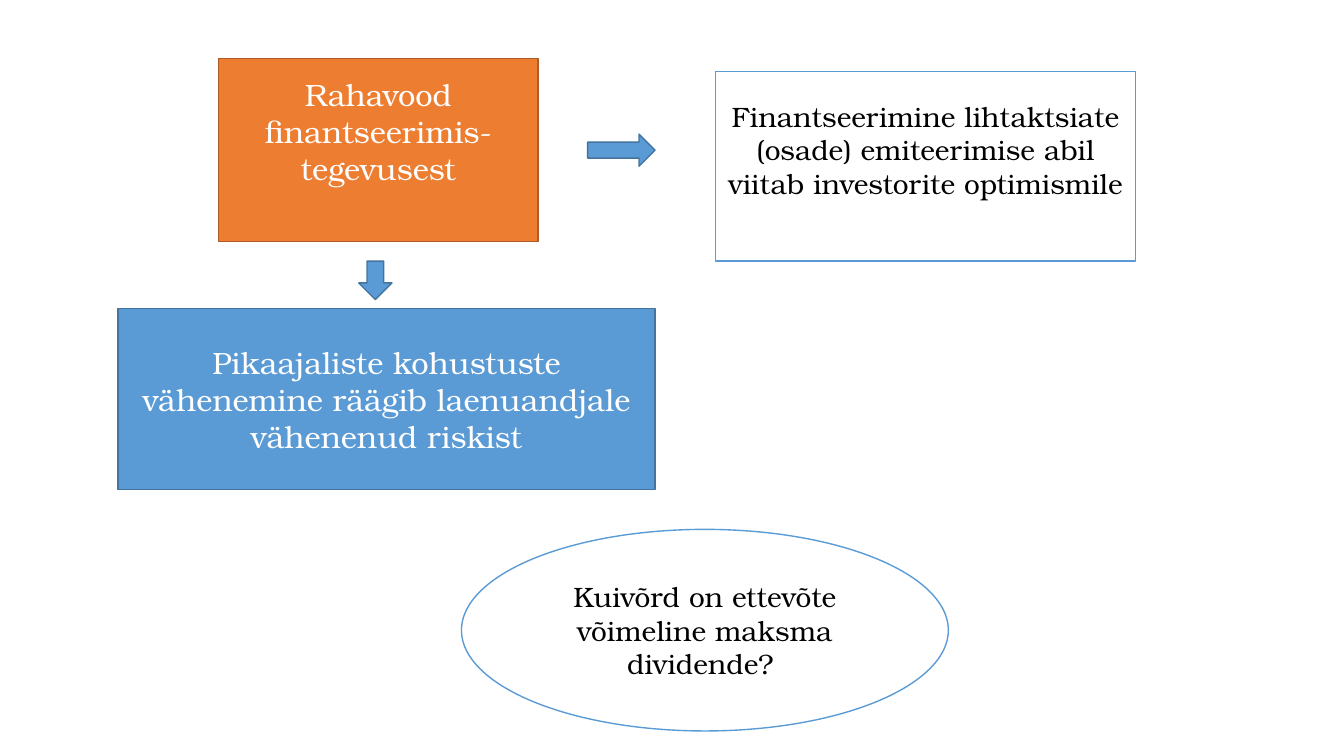
from dataclasses import dataclass

from pptx import Presentation
from pptx import util as u
from pptx.dml import color
from pptx.enum import shapes, text
from pptx.slide import Slide

FONT = "TeX Gyre Bonum"
COLORS = {
    "orange": "ED7D31",
    "orange_edge": "AF5C24",
    "blue": "5B9BD5",
    "blue_edge": "43739E",
    "white": "FFFFFF",
    "black": "000000",
}
KIND = shapes.MSO_SHAPE


@dataclass(frozen=True)
class Block:
    """A filled shape; lengths in cm, text size in points."""
    kind: KIND
    left: float
    top: float
    width: float
    height: float
    fill: str
    line: str
    words: str = ""
    size: int = 20
    ink: str = "black"
    bottom_inset: float = 0.13


BLOCKS = [
    Block(KIND.RECTANGLE, 5.51, 1.47, 8.05, 4.62, "orange", "orange_edge",
          "Rahavood finantseerimis-tegevusest", 22, "white", 1.06),
    Block(KIND.RECTANGLE, 18.03, 1.8, 10.59, 4.78, "white", "blue",
          "Finantseerimine lihtaktsiate (osade) emiteerimise abil "
          "viitab investorite optimismile ", bottom_inset=0.97),
    Block(KIND.RECTANGLE, 2.97, 7.77, 13.54, 4.57, "blue", "blue_edge",
          "Pikaajaliste kohustuste vähenemine räägib laenuandjale "
          "vähenenud riskist", 22, "white"),
    Block(KIND.DOWN_ARROW, 9.04, 6.58, 0.84, 0.97, "blue", "blue_edge"),
    Block(KIND.RIGHT_ARROW, 14.81, 3.38, 1.7, 0.81, "blue", "blue_edge"),
    Block(KIND.OVAL, 11.63, 13.34, 12.27, 5.08, "white", "blue",
          "Kuivõrd on ettevõte võimeline maksma dividende? "),
]


def rgb(name: str) -> color.RGBColor:
    return color.RGBColor.from_string(COLORS[name])


def draw_block(s: Slide, block: Block) -> None:
    sp = s.shapes.add_shape(block.kind, u.Cm(block.left), u.Cm(block.top),
                            u.Cm(block.width), u.Cm(block.height))
    sp.shadow.inherit = False
    sp.fill.solid()
    sp.fill.fore_color.rgb = rgb(block.fill)
    sp.line.color.rgb = rgb(block.line)
    sp.line.width = u.Pt(1)
    if block.words:
        write_text(sp.text_frame, block)


def write_text(tf, block: Block) -> None:
    tf.word_wrap = True
    tf.vertical_anchor = text.MSO_ANCHOR.MIDDLE
    tf.margin_bottom = u.Cm(block.bottom_inset)
    p = tf.paragraphs[0]
    p.alignment = text.PP_ALIGN.CENTER
    r = p.add_run()
    r.text = block.words
    r.font.name = FONT
    r.font.size = u.Pt(block.size)
    r.font.color.rgb = rgb(block.ink)


def main() -> None:
    prs = Presentation()
    prs.slide_width, prs.slide_height = u.Cm(33.87), u.Cm(19.05)
    s = prs.slides.add_slide(prs.slide_layouts[6])
    for block in BLOCKS:
        draw_block(s, block)
    prs.save("out.pptx")


if __name__ == "__main__":
    main()
